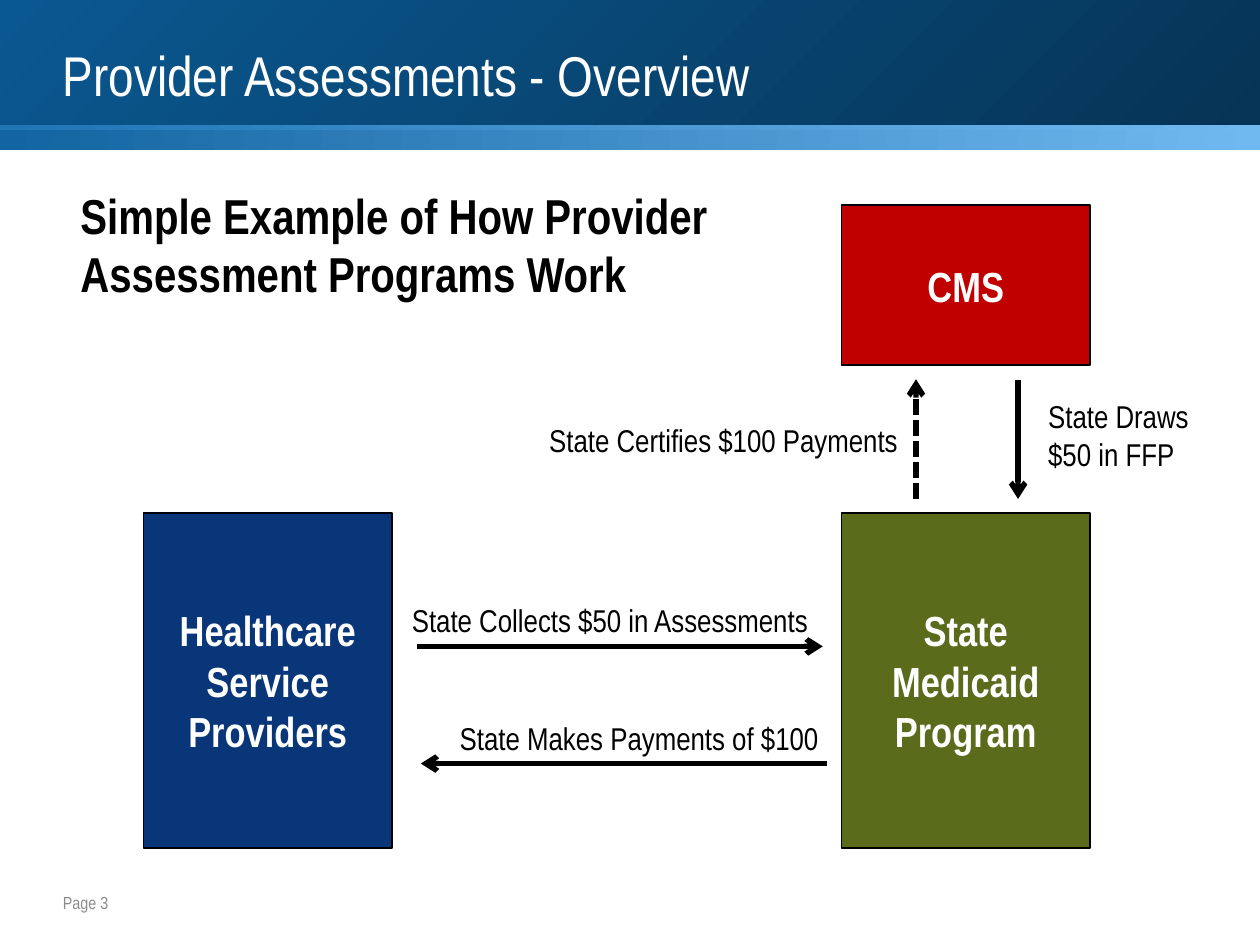
"""Builds the provider assessment overview slide."""
from lxml import etree
from pptx import Presentation
from pptx import util as u
from pptx.dml.color import RGBColor
from pptx.enum import dml, shapes, text
from pptx.oxml.ns import qn

WIDTH, HEIGHT = 10, 7.5
FONT = "Arial Narrow"
BLACK, WHITE, GREY = "000000", "FFFFFF", "8C8C8C"
LEFT_COLUMN, RIGHT_COLUMN, BOX_WIDTH = 1.14, 6.68, 1.97
TOP_ROW, BOTTOM_ROW = (1.63, 1.27), (4.07, 2.66)

BANDS = [
    ((0, 0, WIDTH, 1), ("0A5891", "063456"), 315),
    ((0, 1.02, WIDTH, 0.17), ("1264A2", "70B9F0"), 0),
    ((0, 0.99, WIDTH, 0.04), ("2075B5", "70B9F0"), 0),
]
PARTIES = [
    ("Healthcare Service Providers", LEFT_COLUMN, BOTTOM_ROW, "093678"),
    ("State Medicaid Program", RIGHT_COLUMN, BOTTOM_ROW, "5B6B1C"),
    ("CMS", RIGHT_COLUMN, TOP_ROW, "C00000"),
]
FLOWS = [
    ((3.31, 5.13), (6.53, 5.13), False),
    ((6.56, 6.06), (3.34, 6.06), False),
    ((7.27, 3.96), (7.27, 3.01), True),
    ((8.08, 3.02), (8.08, 3.96), False),
]
FLOW_LABELS = [
    ("State Certifies $100 Payments", (4.26, 3.29, 3.01, 0.4), False),
    ("State Draws $50 in FFP", (8.22, 3.1, 1.62, 0.71), True),
    ("State Collects $50 in Assessments", (3.17, 4.72, 3.38, 0.4), False),
    ("State Makes Payments of $100", (3.55, 5.66, 3.09, 0.4), False),
]
TITLE = ("Provider Assessments - Overview", (0.5, 0, 9.5, 1.17))
HEADING = ("Simple Example of How Provider Assessment Programs Work",
           (0.54, 1.42, 5.63, 1.04))
FOOTER = ("Page 3", (0.5, 6.99, 0.5, 0.26))


def color(value):
    return RGBColor.from_string(value)


def inches(values):
    return [u.Inches(value) for value in values]


def write(box, words, size, ink, bold=False, wrap=True, inset=True,
          anchor=text.MSO_ANCHOR.TOP, align=text.PP_ALIGN.LEFT):
    frame = box.text_frame
    frame.word_wrap = wrap
    frame.vertical_anchor = anchor
    if not inset:
        frame.margin_left = frame.margin_right = 0
        frame.margin_top = frame.margin_bottom = 0
    para = frame.paragraphs[0]
    para.alignment = align
    span = para.add_run()
    span.text = words
    span.font.name, span.font.size, span.font.bold = FONT, u.Pt(size), bold
    span.font.color.rgb = color(ink)


def add_text(page, words, place, size, ink, **style):
    write(page.shapes.add_textbox(*inches(place)), words, size, ink, **style)


def add_rectangle(page, place):
    box = page.shapes.add_shape(shapes.MSO_SHAPE.RECTANGLE, *inches(place))
    box.shadow.inherit = False
    return box


def add_band(page, place, stops, angle):
    band = add_rectangle(page, place)
    band.line.fill.background()
    band.fill.gradient()
    band.fill.gradient_angle = angle
    for stop, value in zip(band.fill.gradient_stops, stops):
        stop.color.rgb = color(value)


def add_party(page, name, left, row, fill):
    top, height = row
    box = add_rectangle(page, (left, top, BOX_WIDTH, height))
    box.fill.solid()
    box.fill.fore_color.rgb = color(fill)
    box.line.color.rgb = color(BLACK)
    box.line.width = u.Pt(1)
    write(box, name, 24, WHITE, bold=True, anchor=text.MSO_ANCHOR.MIDDLE,
          align=text.PP_ALIGN.CENTER)


def add_flow(page, start, end, dashed):
    arrow = page.shapes.add_connector(shapes.MSO_CONNECTOR.STRAIGHT,
                                      *inches(start + end))
    arrow.line.color.rgb = color(BLACK)
    arrow.line.width = u.Pt(3)
    if dashed:
        arrow.line.dash_style = dml.MSO_LINE.SQUARE_DOT
    properties = arrow._element.spPr
    etree.SubElement(properties.find(qn("a:ln")), qn("a:tailEnd"), type="arrow")
    etree.SubElement(properties, qn("a:effectLst"))


def main():
    deck = Presentation()
    deck.slide_width, deck.slide_height = inches((WIDTH, HEIGHT))
    page = deck.slides.add_slide(deck.slide_layouts[6])
    for band in BANDS:
        add_band(page, *band)
    add_text(page, *TITLE, 32, WHITE, inset=False,
             anchor=text.MSO_ANCHOR.MIDDLE)
    add_text(page, *FOOTER, 10, GREY, inset=False,
             anchor=text.MSO_ANCHOR.BOTTOM)
    for party in PARTIES:
        add_party(page, *party)
    for flow in FLOWS:
        add_flow(page, *flow)
    for words, place, wrap in FLOW_LABELS:
        add_text(page, words, place, 18, BLACK, wrap=wrap)
    add_text(page, *HEADING, 28, BLACK, bold=True)
    deck.save("out.pptx")


if __name__ == "__main__":
    main()
